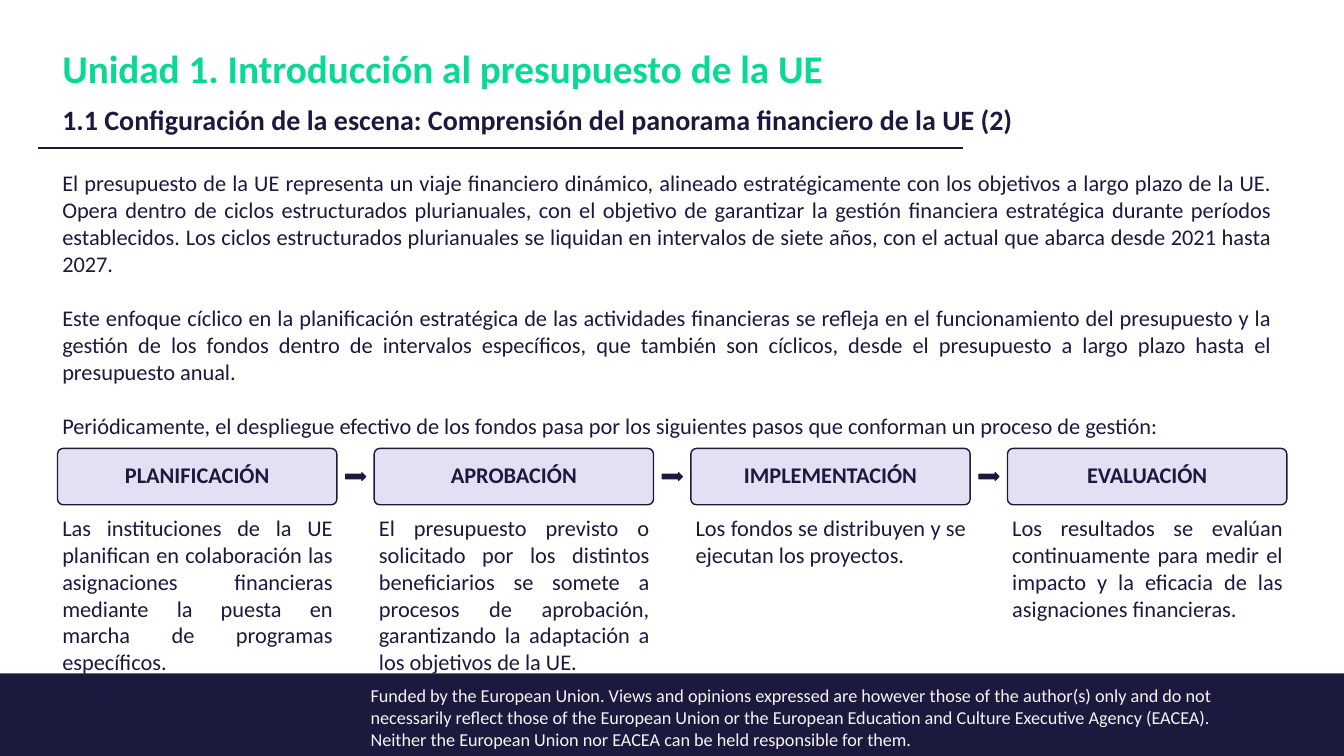
from dataclasses import dataclass

from pptx import Presentation
from pptx.dml.color import RGBColor
from pptx.enum.shapes import MSO_CONNECTOR, MSO_SHAPE
from pptx.enum.text import MSO_ANCHOR, PP_ALIGN
from pptx.oxml.ns import qn
from pptx.util import Cm, Pt

NAVY, GREEN, LILAC, PALE = "1B193E", "0AD995", "E2E1F3", "F5F5F5"
FONT = "Calibri"
STEP_LEFT, STEP_PITCH, STEP_WIDTH = 1.45, 7.98, 7.04
STEP_TOP, STEP_HEIGHT = 11.3, 1.42


@dataclass(frozen=True)
class Step:
    title: str
    description: str


STEPS = [
    Step("PLANIFICACIÓN",
         "Las instituciones de la UE planifican en colaboración las asignaciones "
         "financieras mediante la puesta en marcha de programas específicos."),
    Step("APROBACIÓN",
         "El presupuesto previsto o solicitado por los distintos beneficiarios se somete "
         "a procesos de aprobación, garantizando la adaptación a los objetivos de la UE."),
    Step("IMPLEMENTACIÓN",
         "Los fondos se distribuyen y se ejecutan los proyectos."),
    Step("EVALUACIÓN",
         "Los resultados se evalúan continuamente para medir el impacto y la eficacia "
         "de las asignaciones financieras."),
]

INTRODUCTION = [
    "El presupuesto de la UE representa un viaje financiero dinámico, alineado "
    "estratégicamente con los objetivos a largo plazo de la UE. Opera dentro de ciclos "
    "estructurados plurianuales, con el objetivo de garantizar la gestión financiera "
    "estratégica durante períodos establecidos. Los ciclos estructurados plurianuales se "
    "liquidan en intervalos de siete años, con el actual que abarca desde 2021 hasta 2027.",
    "Este enfoque cíclico en la planificación estratégica de las actividades financieras "
    "se refleja en el funcionamiento del presupuesto y la gestión de los fondos dentro de "
    "intervalos específicos, que también son cíclicos, desde el presupuesto a largo plazo "
    "hasta el presupuesto anual.",
    "Periódicamente, el despliegue efectivo de los fondos pasa por los siguientes pasos "
    "que conforman un proceso de gestión:",
]

DISCLAIMER = (
    "Funded by the European Union. Views and opinions expressed are however those of the "
    "author(s) only and do not necessarily reflect those of the European Union or the "
    "European Education and Culture Executive Agency (EACEA). Neither the European Union "
    "nor EACEA can be held responsible for them."
)


def color(value: str) -> RGBColor:
    return RGBColor.from_string(value)


def write(frame, text: str, *, size: float = 16, ink: str = NAVY, bold: bool = False,
          align=PP_ALIGN.JUSTIFY, spacing: float = 1.0, before: float = 0) -> None:
    """Fill the empty first paragraph, or append another one."""
    first = frame.paragraphs[0]
    para = frame.add_paragraph() if first.runs else first
    para.alignment = align
    para.line_spacing = spacing
    para.space_before = Pt(before)
    span = para.add_run()
    span.text = text
    span.font.name = FONT
    span.font.size = Pt(size)
    span.font.bold = bold
    span.font.color.rgb = color(ink)


def add_text_box(page, left: float, top: float, width: float, height: float,
                 anchor=MSO_ANCHOR.TOP):
    box = page.shapes.add_textbox(Cm(left), Cm(top), Cm(width), Cm(height))
    box.text_frame.word_wrap = True
    box.text_frame.vertical_anchor = anchor
    return box.text_frame


def add_block(page, kind, left: float, top: float, width: float, height: float,
              fill: str, line_width: float = 0):
    block = page.shapes.add_shape(kind, Cm(left), Cm(top), Cm(width), Cm(height))
    block.shadow.inherit = False
    block.fill.solid()
    block.fill.fore_color.rgb = color(fill)
    if line_width:
        block.line.color.rgb = color(NAVY)
        block.line.width = Pt(line_width)
    else:
        block.line.fill.background()
    return block


def add_rule(page, left: float, right: float, top: float) -> None:
    rule = page.shapes.add_connector(MSO_CONNECTOR.STRAIGHT,
                                     Cm(left), Cm(top), Cm(right), Cm(top))
    rule.line.color.rgb = color(NAVY)
    rule.line.width = Pt(1)
    properties = rule._element.spPr
    properties.append(properties.makeelement(qn("a:effectLst"), {}))


def add_step(page, step: Step, left: float) -> None:
    card = add_block(page, MSO_SHAPE.ROUNDED_RECTANGLE, left, STEP_TOP,
                     STEP_WIDTH, STEP_HEIGHT, LILAC, 1)
    card.adjustments[0] = 0.1
    card.text_frame.word_wrap = True
    card.text_frame.vertical_anchor = MSO_ANCHOR.MIDDLE
    write(card.text_frame, step.title, bold=True, align=PP_ALIGN.CENTER, spacing=0.9)
    write(add_text_box(page, left - 0.13, 12.83, 7.32, 4.37), step.description)


def add_step_arrow(page, left: float) -> None:
    arrow = add_block(page, MSO_SHAPE.RIGHT_ARROW, left, 11.91, 0.51, 0.2, NAVY, 0.75)
    arrow.adjustments[0] = 0.6
    arrow.adjustments[1] = 0.5


def main() -> None:
    deck = Presentation()
    deck.slide_width, deck.slide_height = Cm(33.87), Cm(19.05)
    page = deck.slides.add_slide(deck.slide_layouts[6])

    # Footer band
    add_block(page, MSO_SHAPE.RECTANGLE, 0, 16.97, 33.87, 2.08, NAVY)
    write(add_text_box(page, 9.09, 17.12, 22.45, 1.93), DISCLAIMER,
          size=13, ink=PALE, align=PP_ALIGN.LEFT)

    # Heading
    add_rule(page, 0.97, 24.26, 3.73)
    heading = add_text_box(page, 1.32, 1.27, 25.35, 2.29, MSO_ANCHOR.BOTTOM)
    write(heading, "Unidad 1. Introducción al presupuesto de la UE",
          size=28, ink=GREEN, bold=True, spacing=0.9)
    write(heading, "1.1 Configuración de la escena: Comprensión del panorama "
          "financiero de la UE (2)",
          size=20, bold=True, align=PP_ALIGN.LEFT, spacing=0.9, before=10)

    # Introduction
    introduction = add_text_box(page, 1.32, 4.14, 30.99, 8.46)
    for index, text in enumerate(INTRODUCTION):
        write(introduction, text, before=19.5 if index else 0)

    # Management process
    for index, step in enumerate(STEPS):
        left = STEP_LEFT + index * STEP_PITCH
        add_step(page, step, left)
        if index:
            add_step_arrow(page, left - 0.72)

    deck.save("out.pptx")


if __name__ == "__main__":
    main()
